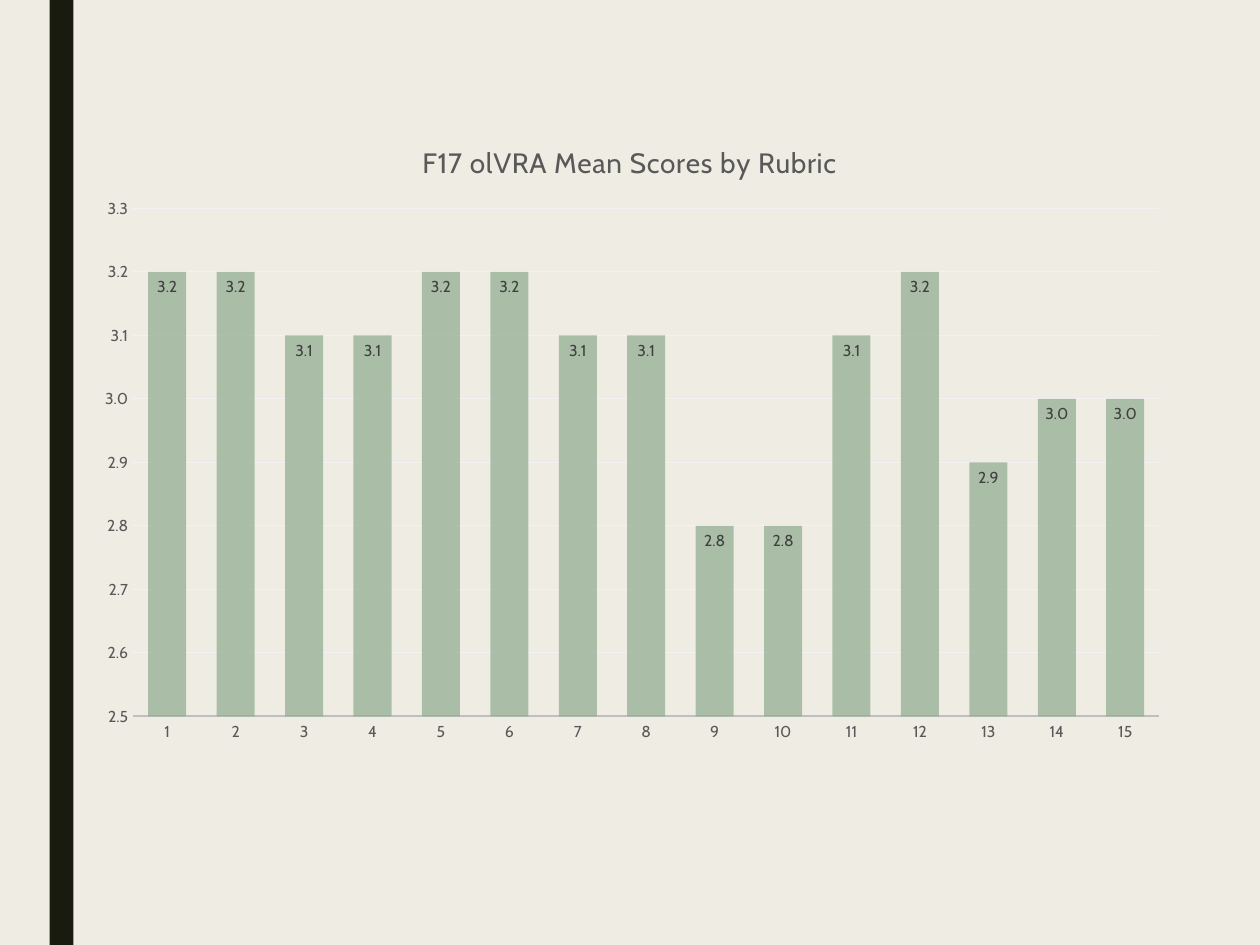
import pptx
import pptx.chart.data
import pptx.dml.color
import pptx.enum.chart
import pptx.enum.shapes
import pptx.oxml
import pptx.oxml.ns
import pptx.util
from pptx.util import Cm
from lxml import etree

FONT = "Cabin"
COLORS = {
    "page": "EFEDE3",
    "band": "191B0E",
    "bar": "8DAB8E",
    "text": "595959",
    "label": "404040",
    "axis": "BFBFBF",
    "grid": "F2F2F2",
}
SCORES = [3.2, 3.2, 3.1, 3.1, 3.2, 3.2, 3.1, 3.1, 2.8, 2.8, 3.1, 3.2, 2.9, 3.0, 3.0]
PLOT = {"x": 0.05, "y": 0.14, "w": 0.93, "h": 0.8}


def rgb(name):
    return pptx.dml.color.RGBColor.from_string(COLORS[name])


def paint(fill, name):
    fill.solid()
    fill.fore_color.rgb = rgb(name)


def draw_line(line, name, width):
    paint(line.fill, name)
    line.width = pptx.util.Pt(width)


def set_font(font, size, color):
    font.name = FONT
    font.size = pptx.util.Pt(size)
    font.bold = False
    font.color.rgb = rgb(color)


def write(frame, text, *, size, color, space=0):
    frame.text = text
    font = frame.paragraphs[0].runs[0].font
    set_font(font, size, color)
    font._rPr.set("spc", str(round(space * 100)))


def add_band(slide):
    band = slide.shapes.add_shape(
        pptx.enum.shapes.MSO_SHAPE.RECTANGLE, Cm(1), 0, Cm(0.48), Cm(19.05))
    paint(band.fill, "band")
    band.line.fill.background()
    band.shadow.inherit = False


def place_plot(chart):
    area = chart.element.xpath("c:chart/c:plotArea")[0]
    for old in area.xpath("c:layout"):
        area.remove(old)
    tag = pptx.oxml.ns.qn
    layout = etree.Element(tag("c:layout"))
    manual = etree.SubElement(layout, tag("c:manualLayout"))
    rules = {"layoutTarget": "inner", "xMode": "edge", "yMode": "edge", **PLOT}
    for key, value in rules.items():
        etree.SubElement(manual, tag("c:" + key), val=str(value))
    area.insert(0, layout)


def style_axes(chart):
    ticks = pptx.enum.chart.XL_TICK_MARK
    for axis in (chart.category_axis, chart.value_axis):
        axis.major_tick_mark = axis.minor_tick_mark = ticks.NONE
        set_font(axis.tick_labels.font, 9, "text")
    draw_line(chart.category_axis.format.line, "axis", 1.25)
    axis = chart.value_axis
    axis.minimum_scale, axis.maximum_scale, axis.major_unit = 2.5, 3.3, 0.1
    axis.tick_labels.number_format = "0.0"
    axis.tick_labels.number_format_is_linked = False
    axis.format.line.fill.background()
    draw_line(axis.major_gridlines.format.line, "grid", 0.75)


def style_bars(chart):
    plot = chart.plots[0]
    plot.gap_width, plot.overlap = 80, 25
    plot.vary_by_categories = False
    bars = plot.series[0]
    bars.invert_if_negative = False
    paint(bars.format.fill, "bar")
    color = bars.format.fill._xPr.find(".//" + pptx.oxml.ns.qn("a:srgbClr"))
    etree.SubElement(color, pptx.oxml.ns.qn("a:alpha"), val="70000")
    labels = bars.data_labels
    labels.show_value = True
    labels.number_format = "0.0"
    labels.number_format_is_linked = False
    labels.position = pptx.enum.chart.XL_LABEL_POSITION.INSIDE_END
    set_font(labels.font, 9, "label")


def add_chart(slide):
    data = pptx.chart.data.CategoryChartData(number_format="0.0")
    data.categories = [str(n) for n in range(1, len(SCORES) + 1)]
    data.add_series("Series 1", SCORES)
    chart = slide.shapes.add_chart(
        pptx.enum.chart.XL_CHART_TYPE.COLUMN_CLUSTERED,
        Cm(1.57), Cm(2.41), Cm(22.25), Cm(12.8), data).chart
    chart.has_legend = False
    chart.font.name = FONT
    chart.font.size = pptx.util.Pt(10)
    write(chart.chart_title.text_frame, "F17 olVRA Mean Scores by Rubric",
          size=16, color="text", space=0.5)
    chart.chart_title.include_in_layout = False
    place_plot(chart)
    style_axes(chart)
    style_bars(chart)


def main():
    deck = pptx.Presentation()
    deck.slide_width, deck.slide_height = Cm(25.4), Cm(19.05)
    slide = deck.slides.add_slide(deck.slide_layouts[6])
    paint(slide.background.fill, "page")
    add_band(slide)
    add_chart(slide)
    deck.save("out.pptx")


if __name__ == "__main__":
    main()
